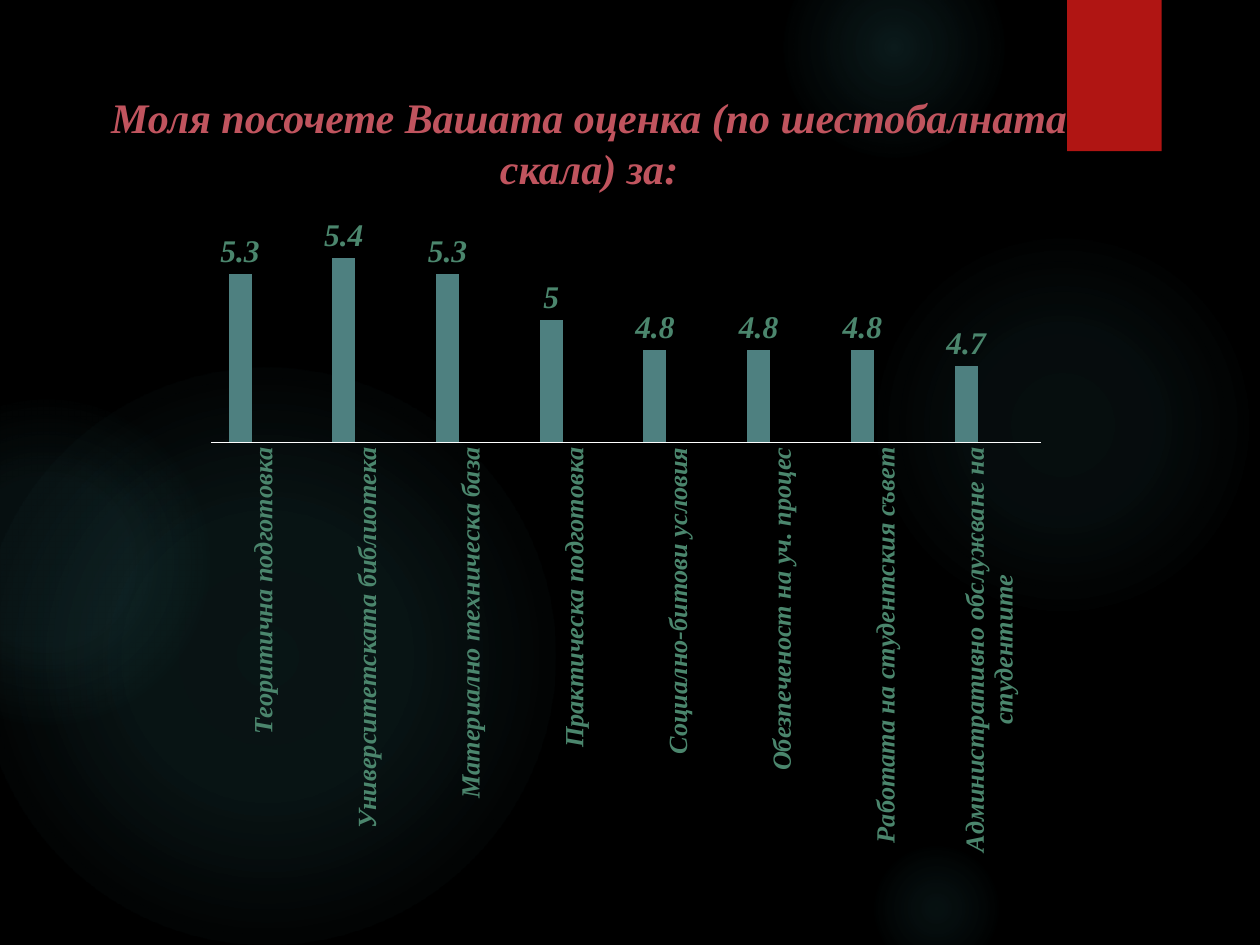
from lxml import etree
from pptx import Presentation
from pptx import util as u
from pptx.chart.data import CategoryChartData
from pptx.dml.color import RGBColor
from pptx.enum import chart as ch
from pptx.enum import shapes, text
from pptx.oxml import parse_xml
from pptx.oxml.ns import nsdecls, qn

BLACK = RGBColor(0x00, 0x00, 0x00)
WHITE = RGBColor(0xFF, 0xFF, 0xFF)
GLOW = RGBColor(0x50, 0xB9, 0xC1)
RED = RGBColor(0xB0, 0x15, 0x13)
ROSE = RGBColor(0xC0, 0x54, 0x5E)
GREEN = RGBColor(0x4B, 0x86, 0x6D)
TEAL = RGBColor(0x4E, 0x80, 0x80)
ORANGE = RGBColor(0xEA, 0x63, 0x12)
YELLOW = RGBColor(0xE6, 0xB7, 0x29)

SERIF = "Times New Roman"
TITLE_FONT = dict(name=SERIF, size=u.Pt(24), bold=True, italic=True, color=ROSE)
VALUE_FONT = dict(name=SERIF, size=u.Pt(18), bold=True, italic=True, color=GREEN)
CATEGORY_FONT = dict(VALUE_FONT, size=u.Pt(15))
CHART_FONT = dict(name="League Spartan", size=u.Pt(18), color=WHITE)

# left, top, diameter, (stop %, opacity %) from the centre outwards
GLOWS = [
    (6.89, 1.83, 3.08, [(0, 7), (36, 6), (69, 0)]),
    (6.22, -0.5, 1.75, [(0, 14), (36, 7), (73, 0)]),
    (6.89, 6.67, 1.08, [(0, 9), (36, 5), (66, 0)]),
    (-0.17, 2.92, 4.58, [(0, 11), (36, 10), (75, 0)]),
    (-0.92, 3.17, 2.58, [(0, 8), (36, 8), (72, 0)]),
]

# The longest name is broken by hand, as turned labels do not wrap
RATINGS = {
    "Теоритична подготовка": 5.3,
    "Университетската библиотека": 5.4,
    "Материално техническа база": 5.3,
    "Практическа подготовка": 5,
    "Социално-битови условия": 4.8,
    "Обезпеченост на уч. процес": 4.8,
    "Работата на студентския съвет": 4.8,
    "Административно обслужване на\nстудентите": 4.7,
}


def set_font(font, style):
    for key, value in style.items():
        if key == "color":
            font.color.rgb = value
        else:
            setattr(font, key, value)


class SurveySlide:
    def __init__(self, deck):
        self.slide = deck.slides.add_slide(deck.slide_layouts[5])
        fill = self.slide.background.fill
        fill.solid()
        fill.fore_color.rgb = BLACK

    def plain_shape(self, kind, box, color):
        shape = self.slide.shapes.add_shape(kind, *map(u.Inches, box))
        shape.shadow.inherit = False
        shape.fill.solid()
        shape.fill.fore_color.rgb = color
        shape.line.fill.background()
        return shape

    def glow(self, left, top, size, stops):
        ellipse = self.plain_shape(
            shapes.MSO_SHAPE.OVAL, (left, top, size, size), GLOW)
        stop_xml = "".join(
            f'<a:gs pos="{pos * 1000}"><a:srgbClr val="{GLOW}">'
            f'<a:alpha val="{opacity * 1000}"/></a:srgbClr></a:gs>'
            for pos, opacity in stops)
        gradient = parse_xml(
            f'<a:gradFill {nsdecls("a")}><a:gsLst>{stop_xml}</a:gsLst>'
            '<a:path path="circle"><a:fillToRect l="50000" t="50000" '
            'r="50000" b="50000"/></a:path></a:gradFill>')
        props = ellipse._element.spPr
        props.replace(props.find(qn("a:solidFill")), gradient)

    def ribbon(self, box):
        ribbon = self.plain_shape(shapes.MSO_SHAPE.RECTANGLE, box, RED)
        effects = ribbon._element.spPr.find(qn("a:effectLst"))
        shadow = etree.SubElement(
            effects, qn("a:outerShdw"), blurRad=str(u.Pt(3)),
            dist=str(u.Pt(2)), dir="5400000", rotWithShape="0")
        color = etree.SubElement(shadow, qn("a:srgbClr"), val=str(BLACK))
        etree.SubElement(color, qn("a:alpha"), val="45000")

    def title(self, words, box):
        title = self.slide.shapes.title
        title.left, title.top, title.width, title.height = map(u.Inches, box)
        frame = title.text_frame
        frame.text = words
        for key, value in dict(word_wrap=True,
                               auto_size=text.MSO_AUTO_SIZE.NONE,
                               vertical_anchor=text.MSO_ANCHOR.TOP).items():
            setattr(frame, key, value)
        heading = frame.paragraphs[0]
        heading.alignment = text.PP_ALIGN.CENTER
        set_font(heading.runs[0].font, TITLE_FONT)
        # Bring the title in front of the decoration
        self.slide.shapes._spTree.append(title._element)

    def rating_chart(self, ratings, box):
        data = CategoryChartData()
        data.categories = list(ratings)
        data.add_series("Series 1", list(ratings.values()))
        for name in ("Series 2", "Series 3"):
            data.add_series(name, [None] * len(ratings))
        chart = self.slide.shapes.add_chart(
            ch.XL_CHART_TYPE.COLUMN_CLUSTERED, *map(u.Inches, box), data).chart
        chart.has_legend = chart.has_title = False
        set_font(chart.font, CHART_FONT)

        # Columns and their values
        plot = chart.plots[0]
        for key, value in dict(gap_width=150, overlap=0,
                               vary_by_categories=False).items():
            setattr(plot, key, value)
        for series, color in zip(plot.series, (TEAL, ORANGE, YELLOW)):
            series.format.fill.solid()
            series.format.fill.fore_color.rgb = color
            labels = series.data_labels
            labels.show_value = True
            labels.position = ch.XL_LABEL_POSITION.OUTSIDE_END
            set_font(labels.font, VALUE_FONT)

        # Axes
        scale = chart.value_axis
        for key, value in dict(minimum_scale=4.2, maximum_scale=5.6,
                               has_major_gridlines=False,
                               visible=False).items():
            setattr(scale, key, value)
        subjects = chart.category_axis
        subjects.major_tick_mark = ch.XL_TICK_MARK.NONE
        subjects.format.line.color.rgb = WHITE
        subjects.format.line.width = u.Pt(0.75)
        set_font(subjects.tick_labels.font, CATEGORY_FONT)
        turned = subjects._element.find(qn("c:txPr")).find(qn("a:bodyPr"))
        turned.set("rot", "-5400000")
        turned.set("vert", "horz")

        # Plot area, as shares of the chart: room below for turned names
        area = chart._chartSpace.chart.plotArea
        old = area.find(qn("c:layout"))
        if old is not None:
            area.remove(old)
        shares = dict(x=0.02, y=0.02, w=0.96, h=0.32)
        share_xml = "".join(
            f'<c:{key} val="{value}"/>' for key, value in shares.items())
        area.insert(0, parse_xml(
            f'<c:layout {nsdecls("c")}><c:manualLayout>'
            '<c:layoutTarget val="inner"/><c:xMode val="edge"/>'
            f'<c:yMode val="edge"/>{share_xml}</c:manualLayout></c:layout>'))


def main():
    deck = Presentation()
    deck.slide_width, deck.slide_height = u.Inches(10), u.Inches(7.5)
    survey = SurveySlide(deck)
    # Decoration
    for glow in GLOWS:
        survey.glow(*glow)
    survey.ribbon((8.47, 0, 0.75, 1.2))
    # Content
    survey.title("Моля посочете Вашата оценка (по шестобалната скала) за:",
                 (0.59, 0.68, 8.17, 0.87))
    survey.rating_chart(RATINGS, (1.54, 1.7, 6.86, 5.33))
    deck.save("out.pptx")


if __name__ == "__main__":
    main()
